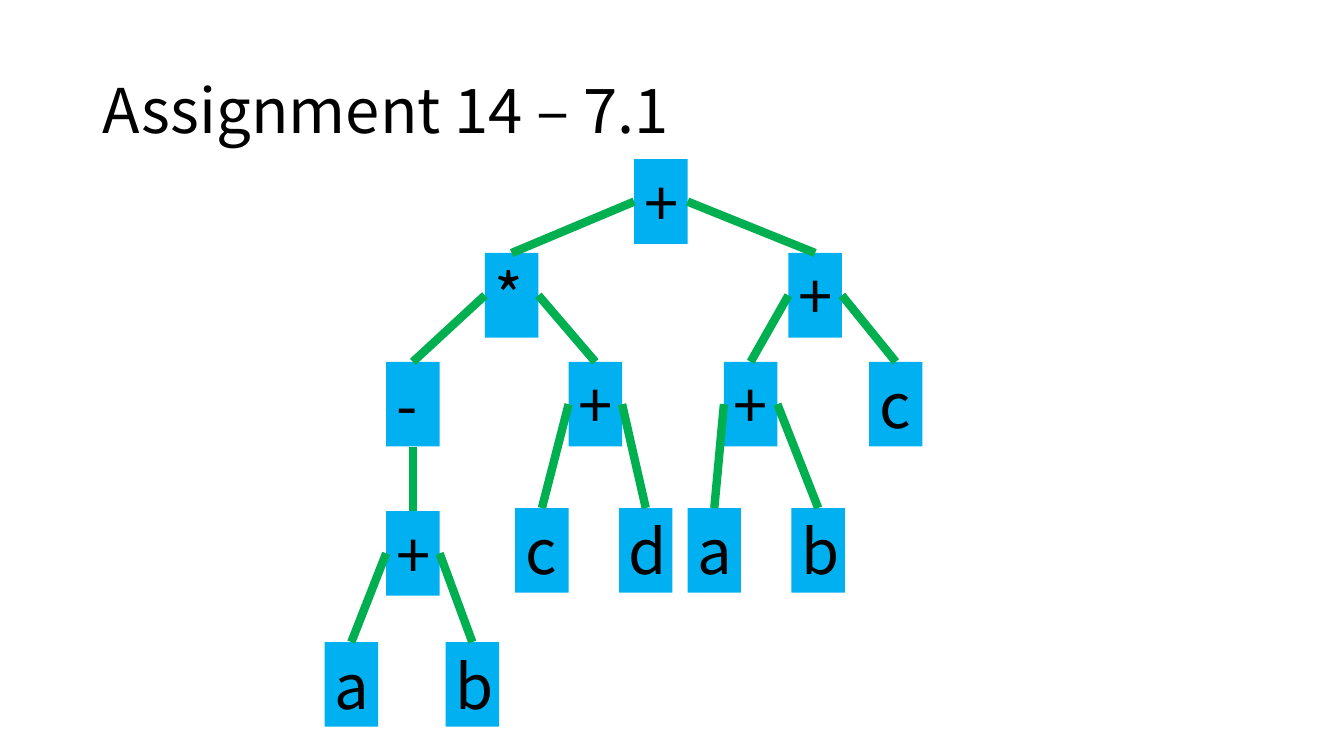
from lxml.etree import SubElement
from pptx import Presentation
from pptx.dml.color import RGBColor
from pptx.enum.shapes import MSO_CONNECTOR, MSO_SHAPE
from pptx.enum.text import MSO_ANCHOR, PP_ALIGN
from pptx.oxml.ns import qn
from pptx.util import Inches, Pt


def rgb(color):
    return RGBColor.from_string(color)


def write(shape, text, format_values):
    tf = shape.text_frame
    tf.word_wrap = True
    tf.vertical_anchor = MSO_ANCHOR.MIDDLE
    p = tf.paragraphs[0]
    for name, value in format_values.items():
        setattr(p, name, value)
    r = p.add_run()
    r.text = text
    for name, value in {"name": "Noto Sans CJK SC", "size": Pt(44)}.items():
        setattr(r.font, name, value)
    r.font.color.rgb = rgb("000000")


prs = Presentation()
prs.slide_width, prs.slide_height = Inches(13.33), Inches(7.5)
s = prs.slides.add_slide(prs.slide_layouts[5])

title = s.shapes.title
for name, value in {"left": 0.92, "top": 0.4, "width": 11.5, "height": 1.45}.items():
    setattr(title, name, Inches(value))
write(title, "Assignment 14 – 7.1", {"alignment": PP_ALIGN.LEFT, "line_spacing": 0.9})

NODE_W, NODE_H = 0.53, 0.84
TOP, BOTTOM, LEFT, RIGHT = 0, 2, 1, 3
levels = [
    (1.58, [("root", "+", 6.29)]),
    (2.51, [("product", "*", 4.81), ("sum", "+", 7.82)]),
    (3.59, [("minus", "-", 3.83), ("c+d", "+", 5.64), ("a+b", "+", 7.18), ("last c", "c", 8.62)]),
    (5.04, [("c", "c", 5.11), ("d", "d", 6.14), ("a", "a", 6.82), ("b", "b", 7.85)]),
    (5.07, [("negated a+b", "+", 3.83)]),
    (6.37, [("negated a", "a", 3.22), ("negated b", "b", 4.42)]),
]
children = {
    "root": ["product", "sum"],
    "product": ["minus", "c+d"],
    "sum": ["a+b", "last c"],
    "minus": ["negated a+b"],
    "c+d": ["c", "d"],
    "a+b": ["a", "b"],
    "negated a+b": ["negated a", "negated b"],
}

nodes = {}
for y, row in levels:
    for key, label, x in row:
        sp = s.shapes.add_shape(MSO_SHAPE.RECTANGLE, *map(Inches, (x, y, NODE_W, NODE_H)))
        sp.shadow.inherit = False
        sp.fill.solid()
        sp.fill.fore_color.rgb = rgb("00B0F0")
        sp.line.fill.background()
        write(sp, label, {"alignment": PP_ALIGN.LEFT})
        nodes[key] = sp

for parent, kids in children.items():
    sides = [LEFT, RIGHT] if len(kids) == 2 else [BOTTOM]
    for kid, side in zip(kids, sides):
        branch = s.shapes.add_connector(MSO_CONNECTOR.STRAIGHT, 0, 0, 0, 0)
        branch.begin_connect(nodes[parent], side)
        branch.end_connect(nodes[kid], TOP)
        branch.line.color.rgb = rgb("00B050")
        branch.line.width = Pt(6)
        SubElement(branch._element.spPr, qn("a:effectLst"))

prs.save("out.pptx")
